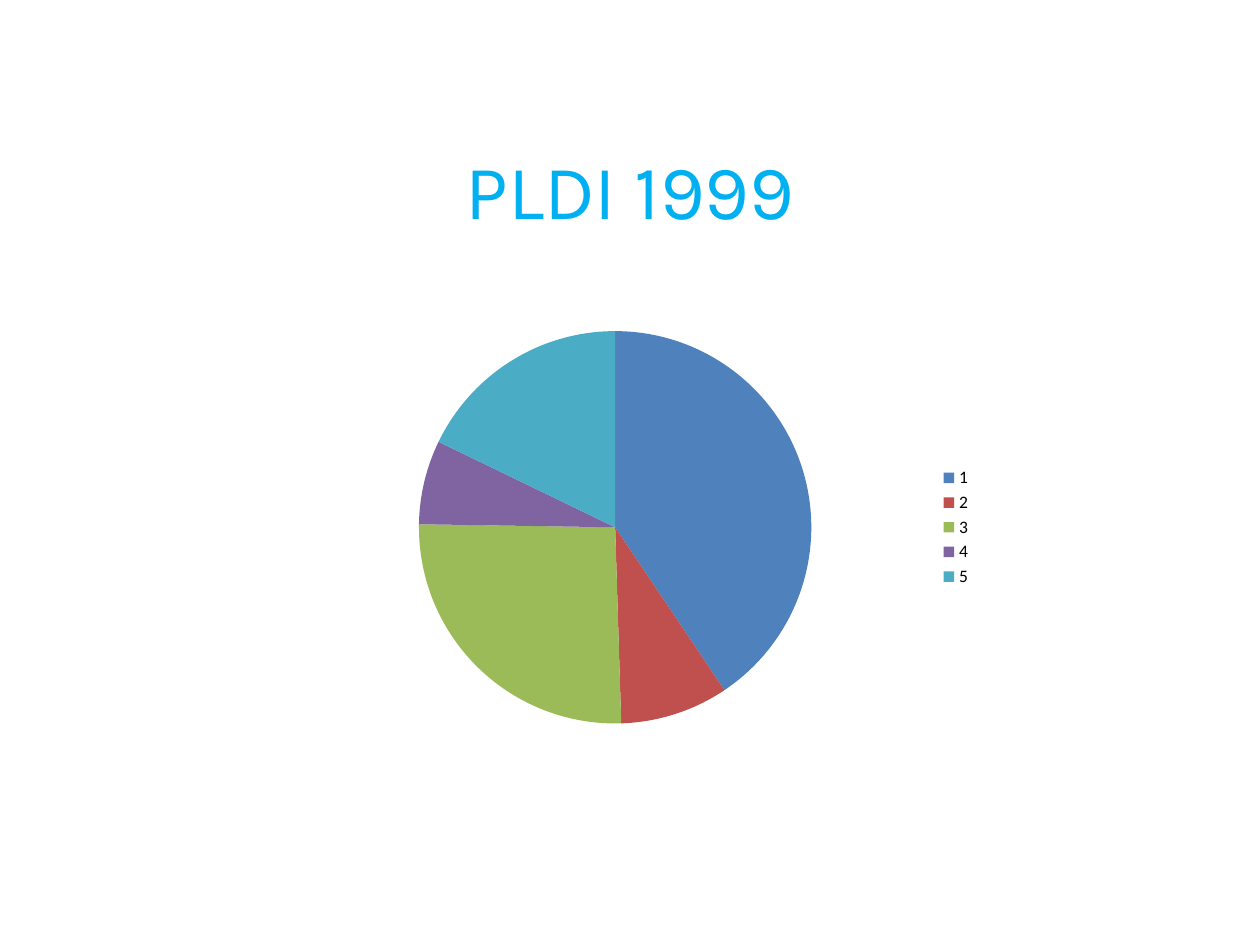
from pptx import Presentation
from pptx.chart.data import CategoryChartData
from pptx.dml.color import RGBColor
from pptx.enum.chart import XL_CHART_TYPE, XL_LEGEND_POSITION
from pptx.enum.text import MSO_ANCHOR, PP_ALIGN
from pptx.util import Inches, Pt

SHARES = {"1": 41, "2": 9, "3": 26, "4": 7, "5": 18}
SLICE_COLORS = ["4F81BD", "C0504D", "9BBB59", "8064A2", "4BACC6"]


def set_font(font, name, size, color):
    font.name = name
    font.size = Pt(size)
    font.color.rgb = RGBColor.from_string(color)


def place_title(slide, text, left, top, width, height):
    title = slide.shapes.title
    title.left, title.top = Inches(left), Inches(top)
    title.width, title.height = Inches(width), Inches(height)
    title.text_frame.text = text
    title.text_frame.vertical_anchor = MSO_ANCHOR.MIDDLE
    paragraph = title.text_frame.paragraphs[0]
    paragraph.alignment = PP_ALIGN.CENTER
    set_font(paragraph.font, "Karla", 44, "00B0F0")


def add_pie(slide, left, top, width, height):
    data = CategoryChartData()
    data.categories = list(SHARES)
    data.add_series("Series 1", list(SHARES.values()))
    chart = slide.shapes.add_chart(
        XL_CHART_TYPE.PIE, Inches(left), Inches(top), Inches(width), Inches(height), data
    ).chart
    set_font(chart.font, "Calibri", 10, "000000")
    chart.has_title = False
    chart.has_legend = True
    chart.legend.position = XL_LEGEND_POSITION.RIGHT
    chart.legend.include_in_layout = False

    plot = chart.plots[0]
    plot.vary_by_categories = True
    for index, color in enumerate(SLICE_COLORS):
        fill = plot.series[0].points[index].format.fill
        fill.solid()
        fill.fore_color.rgb = RGBColor.from_string(color)


def main():
    presentation = Presentation()
    presentation.slide_width = Inches(10)
    presentation.slide_height = Inches(7.5)
    slide = presentation.slides.add_slide(presentation.slide_layouts[5])
    place_title(slide, "PLDI 1999", 0.5, 0.87, 9, 1.25)
    add_pie(slide, 2.32, 2.49, 5.49, 3.39)
    presentation.save("out.pptx")


if __name__ == "__main__":
    main()
